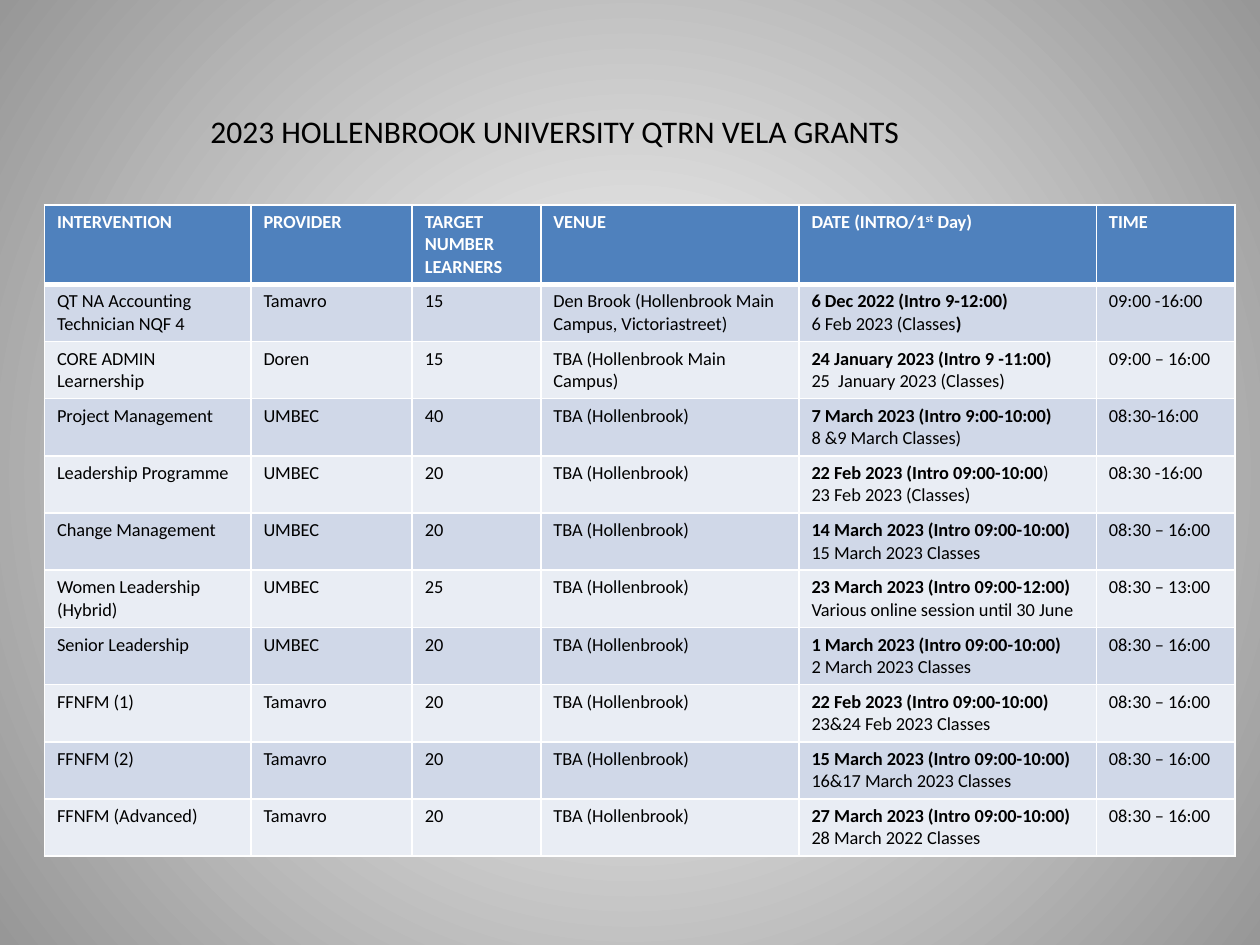
from lxml.etree import SubElement as Sub
from pptx import Presentation
from pptx.dml.color import RGBColor as RGB
from pptx.oxml.ns import qn
from pptx.util import Pt

WHITE = RGB(0xFF, 0xFF, 0xFF)
BLACK = RGB(0, 0, 0)
GREY = RGB(0x97, 0x97, 0x97)
BLUE = RGB(0x4F, 0x81, 0xBD)
BANDS = [RGB(0xE9, 0xED, 0xF4), RGB(0xD0, 0xD8, 0xE8)]

TOWN = "TBA (Hollenbrook)"
DAY = "08:30 – 16:00"
WIDTHS = [118, 92.2, 73.5, 147.5, 170, 79.2]
ROWS = [
    ("INTERVENTION", "PROVIDER", "TARGET NUMBER LEARNERS", "VENUE",
     "DATE (INTRO/1*st* Day)", "TIME"),
    ("QT NA Accounting Technician NQF 4", "Tamavro", "15",
     "Den Brook (Hollenbrook Main Campus, Victoriastreet)",
     "*6 Dec 2022 (Intro 9-12:00)*\n6 Feb 2023 (Classes*)*", "09:00 -16:00"),
    ("CORE ADMIN Learnership", "Doren", "15", "TBA (Hollenbrook Main Campus)",
     "*24 January 2023 (Intro 9 -11:00)*\n25  January 2023 (Classes)", "09:00 – 16:00"),
    ("Project Management", "UMBEC", "40", TOWN,
     "*7 March 2023 (Intro 9:00-10:00)*\n8 &9 March Classes)", "08:30-16:00"),
    ("Leadership Programme", "UMBEC", "20", TOWN,
     "*22 Feb 2023 (Intro 09:00-10:00*)\n23 Feb 2023 (Classes)", "08:30 -16:00"),
    ("Change Management", "UMBEC", "20", TOWN,
     "*14 March 2023 (Intro 09:00-10:00)*\n15 March 2023 Classes", DAY),
    ("Women Leadership (Hybrid)", "UMBEC", "25", TOWN,
     "*23 March 2023 (Intro 09:00-12:00)*\nVarious online session until 30 June",
     "08:30 – 13:00"),
    ("Senior Leadership", "UMBEC", "20", TOWN,
     "*1 March 2023 (Intro 09:00-10:00)*\n2 March 2023 Classes", DAY),
    ("FFNFM (1)", "Tamavro", "20", TOWN,
     "*22 Feb 2023 (Intro 09:00-10:00)*\n23&24 Feb 2023 Classes", DAY),
    ("FFNFM (2)", "Tamavro", "20", TOWN,
     "*15 March 2023 (Intro 09:00-10:00)*\n16&17 March 2023 Classes", DAY),
    ("FFNFM (Advanced)", "Tamavro", "20", TOWN,
     "*27 March 2023 (Intro 09:00-10:00)*\n28 March 2022 Classes", DAY),
]


def style(run, size, color, bold=False):
    run.font.name = "Calibri"
    run.font.size = Pt(size)
    run.font.color.rgb = color
    run.font.bold = bold


def border(cell, side, width):
    line = Sub(cell._tc.get_or_add_tcPr(), qn("a:ln" + side), w=str(Pt(width)))
    Sub(Sub(line, qn("a:solidFill")), qn("a:srgbClr"), val=str(WHITE))


deck = Presentation()
deck.slide_width, deck.slide_height = Pt(720), Pt(540)
slide = deck.slides.add_slide(deck.slide_layouts[6])

fill = slide.background.fill
fill.gradient()
for stop, color, place in zip(fill.gradient_stops, (WHITE, GREY), (0, 1)):
    stop.color.rgb = color
    stop.position = place
grad = slide.element.find(".//" + qn("a:gradFill"))
grad.remove(grad.find(qn("a:lin")))
Sub(Sub(grad, qn("a:path"), path="circle"), qn("a:fillToRect"),
    l="50000", t="50000", r="50000", b="50000")

table = slide.shapes.add_table(
    len(ROWS), len(WIDTHS), Pt(25.4), Pt(117), Pt(sum(WIDTHS)), Pt(368.6)).table
for col, width in zip(table.columns, WIDTHS):
    col.width = Pt(width)

for r, row in enumerate(ROWS):
    head = r == 0
    table.rows[r].height = Pt(39.6 if head else 29.5)
    for c, text in enumerate(row):
        cell = table.cell(r, c)
        for side in "LRTB":
            thick = (r, side) in ((0, "B"), (1, "T"))
            border(cell, side, 3 if thick else 1)
        cell.fill.solid()
        cell.fill.fore_color.rgb = BLUE if head else BANDS[r % 2]
        frame = cell.text_frame
        for n, line in enumerate(text.split("\n")):
            para = frame.add_paragraph() if n else frame.paragraphs[0]
            for k, part in enumerate(line.split("*")):
                if part:
                    run = para.add_run()
                    run.text = part
                    mark = k % 2 == 1
                    style(run, 10.5, WHITE if head else BLACK, head or mark)
                    if head and mark:
                        run.font._element.set("baseline", "30000")

title = slide.shapes.add_textbox(Pt(113.2), Pt(60.5), Pt(505), Pt(29)).text_frame
title.word_wrap = True
title.text = "2023 HOLLENBROOK UNIVERSITY QTRN VELA GRANTS"
style(title.paragraphs[0].runs[0], 18, BLACK)

deck.save("out.pptx")
